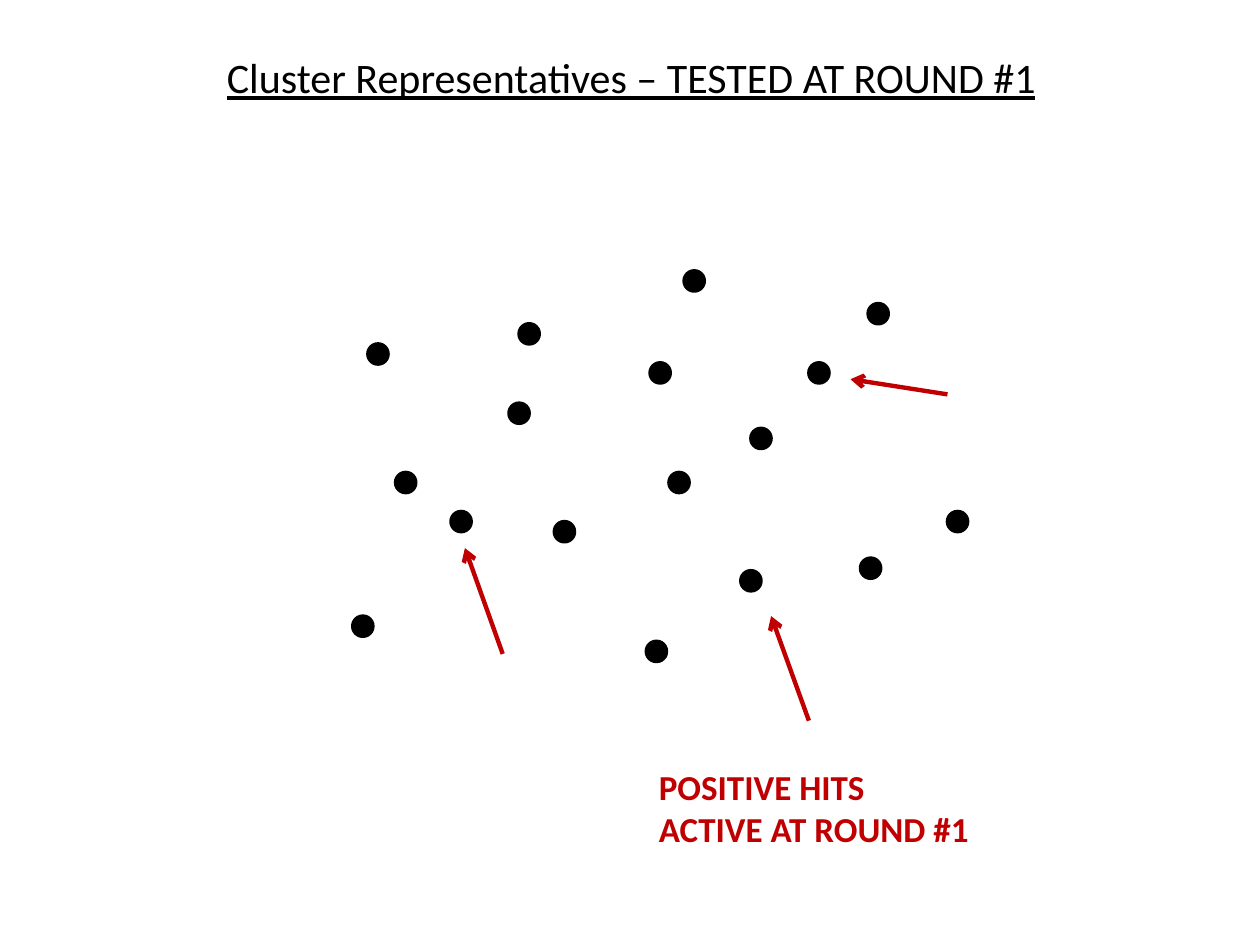
from typing import NamedTuple

from lxml import etree
from pptx import Presentation
from pptx.dml.color import RGBColor
from pptx.enum.shapes import MSO_CONNECTOR, MSO_SHAPE
from pptx.enum.text import MSO_ANCHOR, MSO_AUTO_SIZE, PP_ALIGN
from pptx.oxml.ns import qn
from pptx.util import Inches, Pt

STRAIGHT = MSO_CONNECTOR.STRAIGHT
OVAL = MSO_SHAPE.OVAL
TOP = MSO_ANCHOR.TOP
NO_AUTO_SIZE = MSO_AUTO_SIZE.NONE
LEFT = PP_ALIGN.LEFT

BLACK = RGBColor(0x00, 0x00, 0x00)
HIT_RED = RGBColor(0xC0, 0x00, 0x00)
FONT_NAME = "Calibri"
DOT_SIZE = 0.16
TITLE_ONLY_LAYOUT = 5


class Dot(NamedTuple):
    left: float
    top: float


class Arrow(NamedTuple):
    start_x: float
    start_y: float
    end_x: float
    end_y: float


REPRESENTATIVES = [
    Dot(2.92, 2.73), Dot(3.14, 3.75), Dot(2.8, 4.89), Dot(4.4, 4.14),
    Dot(3.58, 4.06), Dot(4.04, 3.2), Dot(4.12, 2.57), Dot(5.13, 5.09),
    Dot(5.31, 3.75), Dot(5.16, 2.88), Dot(5.43, 2.15), Dot(6.89, 2.41),
    Dot(6.42, 2.88), Dot(6.83, 4.43), Dot(5.88, 4.53), Dot(5.96, 3.4),
    Dot(7.52, 4.06),
]
HIT_ARROWS = [
    Arrow(6.42, 5.72, 6.12, 4.89),
    Arrow(3.99, 5.19, 3.69, 4.35),
    Arrow(7.52, 3.13, 6.75, 3.01),
]
TITLE_FORMAT = {"name": FONT_NAME, "size": Pt(24), "underline": True}
HITS_FORMAT = {"name": FONT_NAME, "size": Pt(20), "bold": True}


def write_text(shape, lines: list[str], font_format: dict, color: RGBColor) -> None:
    """Fill a shape with left-aligned lines, one paragraph each."""
    text_frame = shape.text_frame
    text_frame.word_wrap = False
    text_frame.auto_size = NO_AUTO_SIZE
    text_frame.vertical_anchor = TOP
    text_frame.text = "\n".join(lines)
    for paragraph in text_frame.paragraphs:
        paragraph.alignment = LEFT
        font = paragraph.runs[0].font
        for attribute, value in font_format.items():
            setattr(font, attribute, value)
        font.color.rgb = color


def draw_dot(slide, dot: Dot) -> None:
    shape = slide.shapes.add_shape(
        OVAL, Inches(dot.left), Inches(dot.top), Inches(DOT_SIZE), Inches(DOT_SIZE))
    shape.shadow.inherit = False
    shape.fill.solid()
    shape.fill.fore_color.rgb = BLACK
    shape.line.color.rgb = BLACK
    shape.line.width = Pt(2)


def draw_arrow(slide, arrow: Arrow) -> None:
    connector = slide.shapes.add_connector(STRAIGHT, *map(Inches, arrow))
    connector.line.color.rgb = HIT_RED
    connector.line.width = Pt(2.5)
    line_element = connector.line._get_or_add_ln()
    etree.SubElement(line_element, qn("a:tailEnd"), type="arrow")
    etree.SubElement(connector._element.spPr, qn("a:effectLst"))


def main() -> None:
    presentation = Presentation()
    presentation.slide_width = Inches(10)
    presentation.slide_height = Inches(7.5)
    slide = presentation.slides.add_slide(
        presentation.slide_layouts[TITLE_ONLY_LAYOUT])

    # Title
    title = slide.shapes.title
    title.left, title.top = Inches(1.7), Inches(0.36)
    title.width, title.height = Inches(6.87), Inches(0.5)
    write_text(title, ["Cluster Representatives – TESTED AT ROUND #1"],
               TITLE_FORMAT, BLACK)

    # Cluster representatives
    for dot in REPRESENTATIVES:
        draw_dot(slide, dot)

    # Positive hits and their label
    for arrow in HIT_ARROWS:
        draw_arrow(slide, arrow)
    hits_label = slide.shapes.add_textbox(
        Inches(5.13), Inches(6.03), Inches(2.68), Inches(0.77))
    write_text(hits_label, ["POSITIVE HITS", "ACTIVE AT ROUND #1"],
               HITS_FORMAT, HIT_RED)

    presentation.save("out.pptx")


if __name__ == "__main__":
    main()
